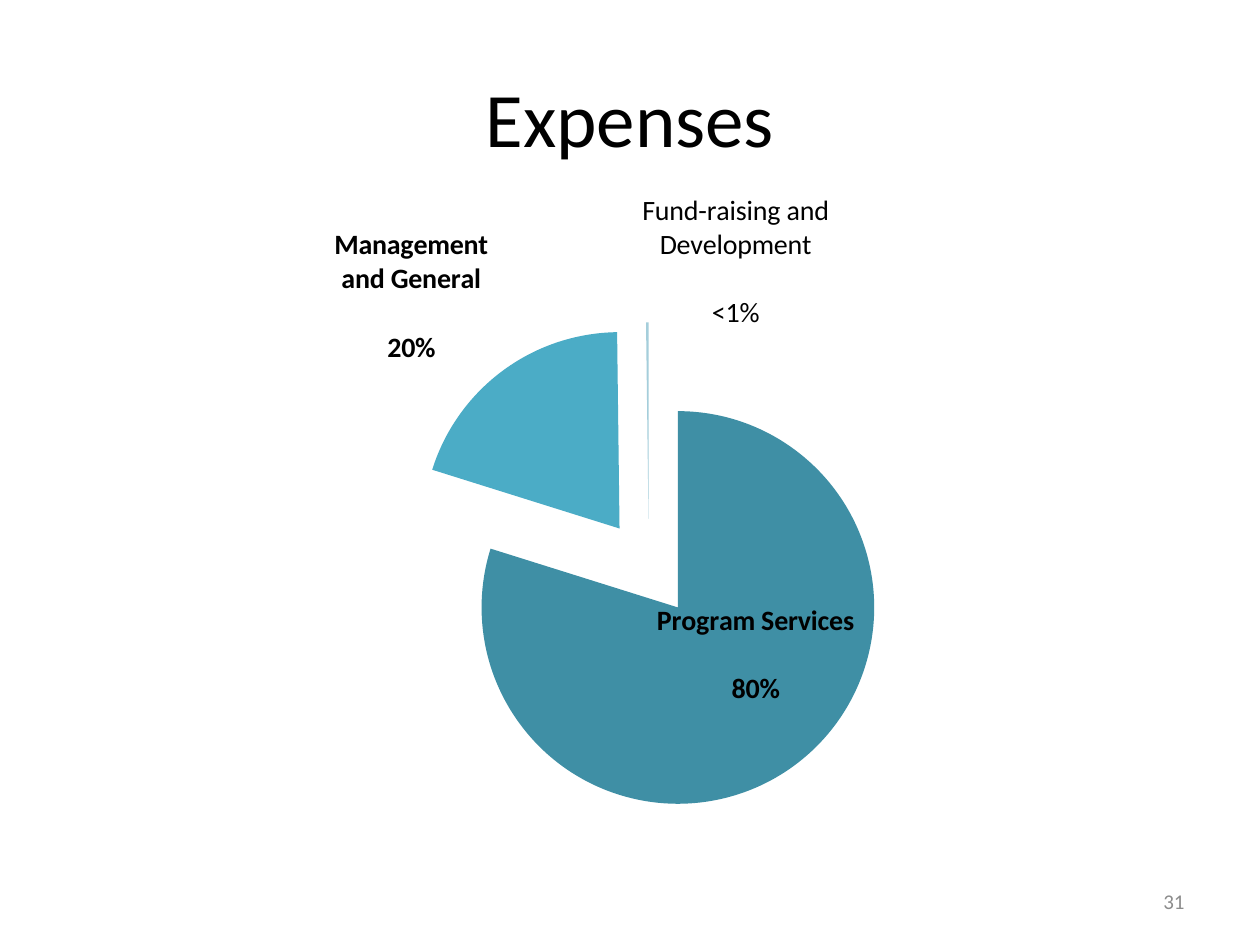
from pptx import Presentation
from pptx.chart.data import CategoryChartData
from pptx.dml.color import RGBColor
from pptx.enum.chart import XL_CHART_TYPE
from pptx.enum.text import MSO_ANCHOR, PP_ALIGN
from pptx.oxml import parse_xml
from pptx.oxml.ns import nsdecls
from pptx.util import Cm, Pt

PIE = XL_CHART_TYPE.PIE
MIDDLE = MSO_ANCHOR.MIDDLE
CENTER, RIGHT = PP_ALIGN.CENTER, PP_ALIGN.RIGHT

THEME = {
    "font": "Calibri", "text": "000000", "muted": "8C8C8C",
    "title": 44, "label": 16, "number": 12,
}
TITLE = "Expenses"
PAGE_NUMBER = "31"
EXPENSES = [
    {"name": "Program Services", "share": 80, "color": "3F8FA5",
     "bold": 1, "wrap": "none", "place": "ctr", "shift": (0.02, -0.04)},
    {"name": "Management and General", "share": 20, "color": "4BACC6",
     "bold": 1, "wrap": "square", "place": "outEnd", "shift": (-0.01, 0)},
    {"name": "Fund-raising and Development", "share": 0.2, "color": "A5CEDB",
     "bold": 0, "wrap": "square", "place": "outEnd", "shift": (0.09, 0.02)},
]
EXPLOSION = 25
PLOT = {"x": 0.27, "y": 0.2, "w": 0.5, "h": 0.64}


def add_text(slide, text, box, size, color, align):
    frame = slide.shapes.add_textbox(*map(Cm, box)).text_frame
    frame.word_wrap = True
    frame.vertical_anchor = MIDDLE
    line = frame.paragraphs[0]
    line.text = text
    line.alignment = align
    line.font.name = THEME["font"]
    line.font.size = Pt(size)
    line.font.color.rgb = RGBColor.from_string(color)


def label_xml(index, expense):
    x, y = expense["shift"]
    return f"""<c:dLbl {nsdecls("c", "a")}><c:idx val="{index}"/>
      <c:layout><c:manualLayout><c:x val="{x}"/><c:y val="{y}"/></c:manualLayout></c:layout>
      <c:numFmt formatCode="[&lt;0.01]&quot;&lt;1%&quot;;0%" sourceLinked="0"/>
      <c:spPr><a:noFill/><a:ln><a:noFill/></a:ln></c:spPr>
      <c:txPr><a:bodyPr wrap="{expense['wrap']}"/><a:p><a:pPr>
        <a:defRPr sz="{THEME['label'] * 100}" b="{expense['bold']}">
        <a:solidFill><a:srgbClr val="{THEME['text']}"/></a:solidFill>
        <a:latin typeface="{THEME['font']}"/></a:defRPr></a:pPr></a:p></c:txPr>
      <c:dLblPos val="{expense['place']}"/><c:showLegendKey val="0"/><c:showVal val="0"/>
      <c:showCatName val="1"/><c:showSerName val="0"/><c:showPercent val="1"/>
      <c:showBubbleSize val="0"/><c:separator>\n\n</c:separator></c:dLbl>"""


def add_expense_pie(slide, box):
    data = CategoryChartData()
    data.categories = [expense["name"] for expense in EXPENSES]
    data.add_series("Series 1", [expense["share"] for expense in EXPENSES])
    chart = slide.shapes.add_chart(PIE, *map(Cm, box), data).chart
    chart.has_legend = False
    chart.has_title = False
    chart.font.name = THEME["font"]
    chart.font.size = Pt(THEME["label"])
    chart.font.color.rgb = RGBColor.from_string(THEME["text"])
    plot = chart.plots[0]
    plot.vary_by_categories = True
    series = plot.series[0]
    for index, expense in enumerate(EXPENSES):
        fill = series.points[index].format.fill
        fill.solid()
        fill.fore_color.rgb = RGBColor.from_string(expense["color"])
    explosion = parse_xml(f'<c:explosion {nsdecls("c")} val="{EXPLOSION}"/>')
    series._element.find("{*}dPt").addprevious(explosion)
    labels = series.data_labels._element
    for index, expense in reversed(list(enumerate(EXPENSES))):
        labels.insert(0, parse_xml(label_xml(index, expense)))
    for leader in labels.findall("{*}showLeaderLines"):
        labels.remove(leader)
    labels.append(parse_xml(f'<c:showLeaderLines {nsdecls("c")} val="0"/>'))
    area = chart._chartSpace.chart.plotArea
    for layout in area.findall("{*}layout"):
        area.remove(layout)
    edges = "".join(f'<c:{edge} val="{part}"/>' for edge, part in PLOT.items())
    area.insert(0, parse_xml(
        f'<c:layout {nsdecls("c")}><c:manualLayout><c:layoutTarget val="inner"/>'
        f'<c:xMode val="edge"/><c:yMode val="edge"/>{edges}</c:manualLayout></c:layout>'))


def main():
    deck = Presentation()
    deck.slide_width, deck.slide_height = Cm(25.4), Cm(19.05)
    slide = deck.slides.add_slide(deck.slide_layouts[6])
    add_text(slide, TITLE, (1.27, 0.76, 22.86, 3.18), THEME["title"], THEME["text"], CENTER)
    add_text(slide, PAGE_NUMBER, (18.2, 17.66, 5.93, 1.01), THEME["number"], THEME["muted"], RIGHT)
    add_expense_pie(slide, (2.79, 3.25, 19.79, 15.77))
    deck.save("out.pptx")


if __name__ == "__main__":
    main()
